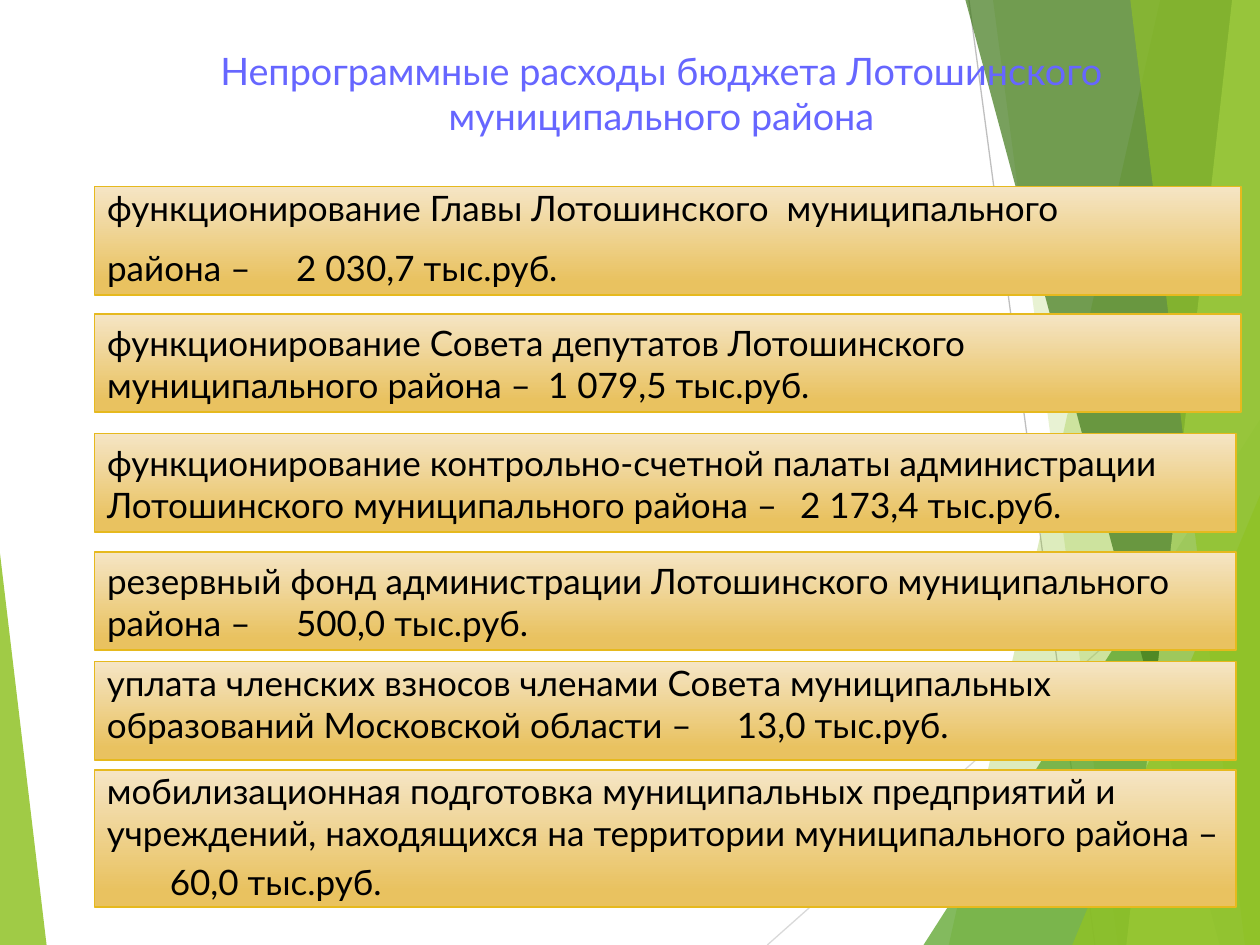
from dataclasses import dataclass
from lxml import etree
from pptx import Presentation
from pptx import util as u
from pptx.dml.color import RGBColor
from pptx.enum import shapes, text
from pptx.oxml.ns import qn

LIME = RGBColor(0x90, 0xC2, 0x26)
GREEN = RGBColor(0x54, 0xA0, 0x21)
FOREST = RGBColor(0x3F, 0x78, 0x19)
PALE_LIME = RGBColor(0xC0, 0xE4, 0x74)
GREY = RGBColor(0xBF, 0xBF, 0xBF)
LIGHT_GREY = RGBColor(0xD9, 0xD9, 0xD9)
VIOLET = RGBColor(0x66, 0x66, 0xFF)
BLACK = RGBColor(0, 0, 0)
CREAM = RGBColor(0xF5, 0xE5, 0xC5)
SAND = RGBColor(0xE9, 0xC2, 0x60)
GOLD = RGBColor(0xE6, 0xB9, 0x1E)
FONT = "Lato"
TOP, RIGHT, BOTTOM = -0.01, 10, 7.5


@dataclass
class Ray:
    start: tuple[float, float]
    end: tuple[float, float]
    color: RGBColor


@dataclass
class Band:
    top_x: float
    bottom_x: float
    color: RGBColor
    opacity: int


@dataclass
class Wedge:
    left: float
    top: float
    width: float
    apex: float
    color: RGBColor
    opacity: int


@dataclass
class Expense:
    top: float
    width: float
    height: float
    paragraphs: list[str]
    amount_tab: float


RAYS = [
    Ray((7.69, 0), (8.69, 7.5), GREY),
    Ray((10, 4.03), (6.09, 7.5), LIGHT_GREY),
]
FACETS = [
    Band(9.21, 7.53, LIME, 30),
    Band(7.88, 8.87, LIME, 20),
    Wedge(7.33, 3.33, 2.67, 1, GREEN, 72),
    Band(7.66, 9.68, FOREST, 70),
    Band(9.78, 8.94, PALE_LIME, 70),
    Band(8.97, 9.88, LIME, 65),
    Wedge(8.51, 3.93, 1.49, 1, LIME, 80),
    Wedge(0, 4.39, 0.37, 0, LIME, 85),
]
LISTED = [
    Expense(1.48, 9.1, 0.86, [
        "функционирование Главы Лотошинского  муниципального",
        "района –\t2 030,7 тыс.руб."], 5.34),
    Expense(2.49, 9.1, 0.78, [
        "функционирование Совета депутатов Лотошинского "
        "муниципального района –\t1 079,5 тыс.руб."], 5.72),
    Expense(3.44, 9.06, 0.78, [
        "функционирование контрольно-счетной палаты администрации "
        "Лотошинского муниципального района –\t2 173,4 тыс.руб."], 6.1),
    Expense(4.38, 9.06, 0.78, [
        "резервный фонд администрации Лотошинского муниципального "
        "района –\t500,0 тыс.руб."], 5.63),
]
EXTRA = [
    Expense(5.25, 9.06, 0.78, [
        "уплата членских взносов членами Совета муниципальных "
        "образований Московской области –\t13,0 тыс.руб."], 6.28),
    Expense(6.11, 9.06, 1.09, [
        "мобилизационная подготовка муниципальных предприятий и "
        "учреждений, находящихся на территории муниципального района –",
        "\t60,0 тыс.руб."], 5.55),
]


def draw_ray(page, ray: Ray) -> None:
    points = [u.Inches(value) for value in ray.start + ray.end]
    line = page.shapes.add_connector(shapes.MSO_CONNECTOR.STRAIGHT, *points)
    line.line.color.rgb = ray.color
    line.line.width = u.Pt(0.75)
    etree.SubElement(line._element.spPr, qn("a:effectLst"))


def draw_facet(page, facet: Band | Wedge) -> None:
    if isinstance(facet, Band):
        corners = [(RIGHT, TOP), (RIGHT, BOTTOM), (facet.bottom_x, BOTTOM)]
        builder = page.shapes.build_freeform(u.Inches(facet.top_x), u.Inches(TOP))
        builder.add_line_segments([(u.Inches(x), u.Inches(y)) for x, y in corners])
        shape = builder.convert_to_shape()
    else:
        shape = page.shapes.add_shape(
            shapes.MSO_SHAPE.ISOSCELES_TRIANGLE, u.Inches(facet.left), u.Inches(facet.top),
            u.Inches(facet.width), u.Inches(BOTTOM - facet.top))
        shape.adjustments[0] = facet.apex
    shape.shadow.inherit = False
    shape.line.fill.background()
    shape.fill.solid()
    shape.fill.fore_color.rgb = facet.color
    color = shape._element.spPr.find(".//" + qn("a:srgbClr"))
    etree.SubElement(color, qn("a:alpha"), val=str(facet.opacity * 1000))


def place(box, left: float, top: float, width: float, height: float) -> None:
    box.left, box.top = u.Inches(left), u.Inches(top)
    box.width, box.height = u.Inches(width), u.Inches(height)
    box.text_frame.word_wrap = True
    box.text_frame.auto_size = text.MSO_AUTO_SIZE.NONE


def add_span(para, words: str, size: float, color: RGBColor) -> None:
    span = para.add_run()
    span.text = words
    span.font.name = FONT
    span.font.size = u.Pt(size)
    span.font.bold = False
    span.font.color.rgb = color


def fill_expense(box, expense: Expense, anchor: text.MSO_ANCHOR, gap: float) -> None:
    place(box, 0.75, expense.top, expense.width, expense.height)
    box.shadow.inherit = False
    box.fill.gradient()
    box.fill.gradient_angle = 270
    for stop, color, position in zip(box.fill.gradient_stops, (CREAM, SAND), (0, 0.88)):
        stop.color.rgb = color
        stop.position = position
    box.line.color.rgb = GOLD
    box.line.width = u.Pt(1)
    frame = box.text_frame
    frame.vertical_anchor = anchor
    for index, words in enumerate(expense.paragraphs):
        para = frame.add_paragraph() if index else frame.paragraphs[0]
        para.alignment = text.PP_ALIGN.LEFT
        para.space_before = u.Pt(gap)
        settings = para._p.get_or_add_pPr()
        settings.set("marL", "0")
        settings.set("indent", "0")
        etree.SubElement(settings, qn("a:buNone"))
        tabs = etree.SubElement(settings, qn("a:tabLst"))
        etree.SubElement(tabs, qn("a:tab"), pos=str(u.Inches(expense.amount_tab)), algn="l")
        add_span(para, words, 20, BLACK)


def main() -> None:
    deck = Presentation()
    deck.slide_width, deck.slide_height = u.Inches(10), u.Inches(7.5)
    page = deck.slides.add_slide(deck.slide_layouts.get_by_name("Comparison"))
    title, *bodies = list(page.placeholders)

    for ray in RAYS:
        draw_ray(page, ray)
    for facet in FACETS:
        draw_facet(page, facet)
    for holder in (title, *bodies):
        page.shapes._spTree.append(holder._element)

    place(title, 1, 0.3, 8.5, 0.87)
    title.text_frame.vertical_anchor = text.MSO_ANCHOR.MIDDLE
    heading = title.text_frame.paragraphs[0]
    heading.alignment = text.PP_ALIGN.CENTER
    add_span(heading, "Непрограммные расходы бюджета Лотошинского муниципального района",
             21.6, VIOLET)

    for body, expense in zip(bodies, LISTED):
        fill_expense(body, expense, text.MSO_ANCHOR.BOTTOM, 10)
    for expense in EXTRA:
        box = page.shapes.add_shape(shapes.MSO_SHAPE.RECTANGLE, 0, 0, 0, 0)
        box.text_frame.margin_top = 0
        fill_expense(box, expense, text.MSO_ANCHOR.TOP, 4)

    deck.save("out.pptx")


if __name__ == "__main__":
    main()
